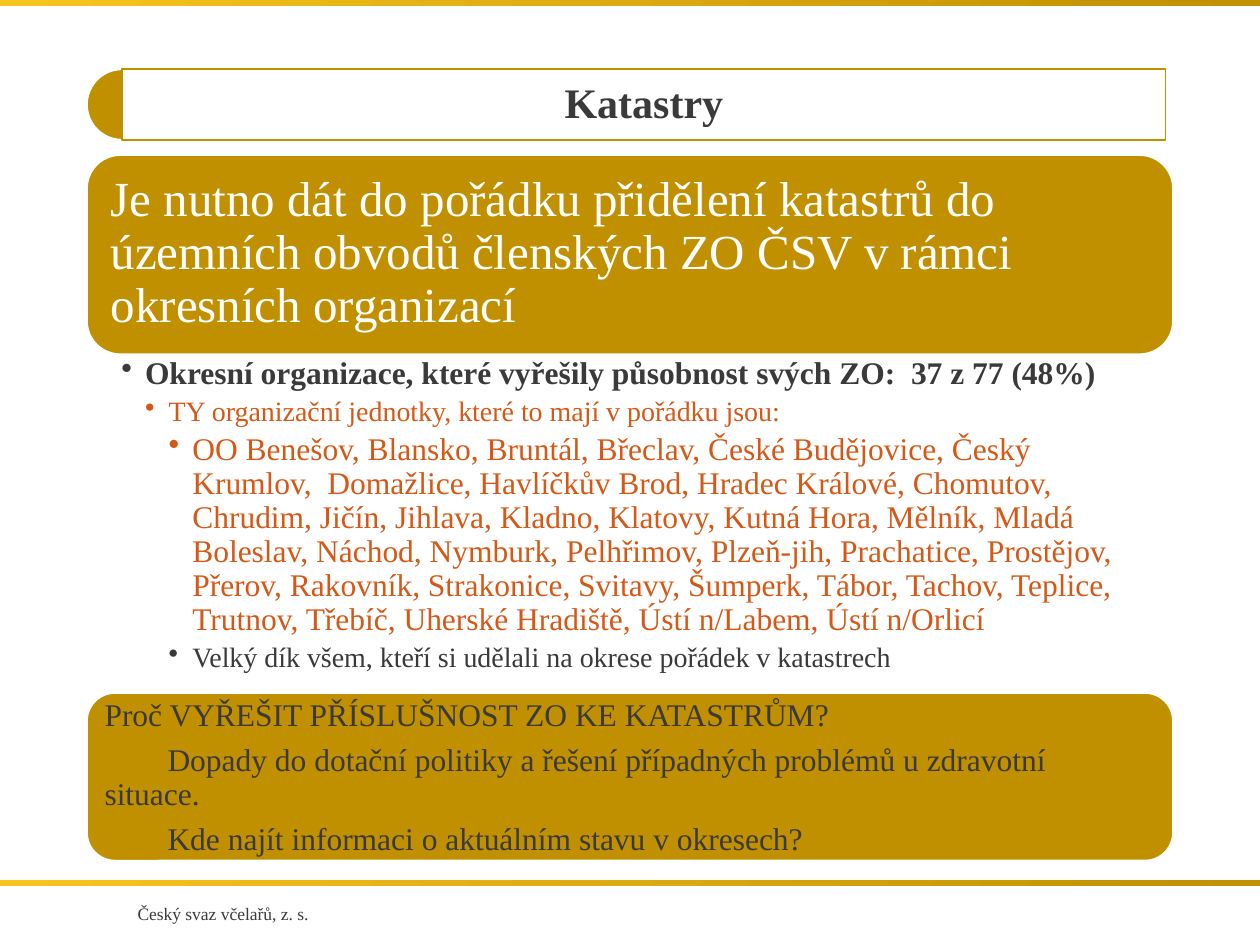
from dataclasses import dataclass

from lxml.etree import SubElement
from pptx import Presentation
from pptx.dml.color import RGBColor
from pptx.enum.shapes import MSO_SHAPE
from pptx.enum.text import MSO_ANCHOR, PP_ALIGN
from pptx.oxml.ns import qn
from pptx.util import Pt

FONT = "Times New Roman"
GOLD, DARK, ORANGE, WHITE = "C19000", "3A3A3A", "D55816", "FFFFFF"
BAND_START, BAND_END = "C19003", "F7C41F"
LEFT, WIDTH = 49.7, 620.6
TITLE_BOX = (69.8, 39.6, 596.2, 40.3)


@dataclass(frozen=True)
class Line:
    text: str
    size: float
    color: str = DARK
    bold: bool = False
    level: int = 0
    before: float = 0
    spacing: float = 0.9
    align: PP_ALIGN = PP_ALIGN.LEFT


@dataclass(frozen=True)
class TextBlock:
    box: tuple[float, float, float, float]
    insets: tuple[float, float, float, float]
    lines: list[Line]
    anchor: MSO_ANCHOR = MSO_ANCHOR.MIDDLE


TEXT_BLOCKS = [
    TextBlock((38.9, 512.6, 177.1, 19.4), (7.2, 3.6, 7.2, 3.6), [
        Line("Český svaz včelařů, z. s.", 10, spacing=1, align=PP_ALIGN.CENTER),
    ], MSO_ANCHOR.TOP),
    TextBlock((54.7, 93.6, 609.8, 103), (8.64, 8.64, 8.64, 8.64), [
        Line("Je nutno dát do pořádku přidělení katastrů do územních obvodů "
             "členských ZO ČSV v rámci okresních organizací", 28, WHITE),
    ]),
    TextBlock((LEFT, 202.3, WIDTH, 176.4), (19.7, 1.6, 10.1, 1.6), [
        Line("Okresní organizace, které vyřešily působnost svých ZO:  37 z 77 (48%)",
             18, bold=True, level=1),
        Line("TY organizační jednotky, které to mají v pořádku jsou:",
             16, ORANGE, level=2, before=3.6),
        Line("OO Benešov, Blansko, Bruntál, Břeclav, České Budějovice, Český Krumlov,  "
             "Domažlice, Havlíčkův Brod, Hradec Králové, Chomutov, Chrudim, Jičín, "
             "Jihlava, Kladno, Klatovy, Kutná Hora, Mělník, Mladá Boleslav, Náchod, "
             "Nymburk, Pelhřimov, Plzeň-jih, Prachatice, Prostějov, Přerov, Rakovník, "
             "Strakonice, Svitavy, Šumperk, Tábor, Tachov, Teplice, Trutnov, Třebíč, "
             "Uherské Hradiště, Ústí n/Labem, Ústí n/Orlicí",
             18, ORANGE, level=3, before=3.2),
        Line("Velký dík všem, kteří si udělali na okrese pořádek v katastrech",
             16, level=3, before=3.6),
    ], MSO_ANCHOR.TOP),
    TextBlock((54.7, 402.5, 609.8, 84.2), (5.04, 5.04, 5.04, 5.04), [
        Line("Proč VYŘEŠIT PŘÍSLUŠNOST ZO KE KATASTRŮM?", 18),
        Line("\tDopady do dotační politiky a řešení případných problémů "
             "u zdravotní \tsituace.", 18, before=6.3),
        Line("\tKde najít informaci o aktuálním stavu v okresech?", 18, before=6.3),
    ]),
    TextBlock(TITLE_BOX, (7.2, 7.2, 7.2, 7.2), [
        Line("Katastry", 24, bold=True, align=PP_ALIGN.CENTER),
    ]),
]


def rgb(value: str) -> RGBColor:
    return RGBColor.from_string(value)


def add_shape(slide, kind: MSO_SHAPE, box: tuple, fill: str = GOLD,
              line: str = WHITE, adjustments: tuple = ()):
    shape = slide.shapes.add_shape(kind, *map(Pt, box))
    shape.shadow.inherit = False
    shape.fill.solid()
    shape.fill.fore_color.rgb = rgb(fill)
    shape.line.color.rgb = rgb(line)
    shape.line.width = Pt(1)
    for index, value in enumerate(adjustments):
        shape.adjustments[index] = value
    return shape


def add_band(slide, top: float) -> None:
    band = add_shape(slide, MSO_SHAPE.RECTANGLE, (0, top, 720, 3.6))
    band.line.fill.background()
    band.fill.gradient()
    band.fill.gradient_angle = 180
    for stop, color, position in zip(band.fill.gradient_stops,
                                     (BAND_START, BAND_END), (0, 1)):
        stop.color.rgb = rgb(color)
        stop.position = position


def add_bullet(paragraph, line: Line) -> None:
    properties = paragraph._p.get_or_add_pPr()
    properties.set("marL", str(Pt(13.5 * line.level)))
    properties.set("indent", str(Pt(-13.5)))
    color = SubElement(properties, qn("a:buClr"))
    SubElement(color, qn("a:srgbClr"), val=line.color)
    SubElement(properties, qn("a:buChar"), char="•")


def add_text(slide, block: TextBlock) -> None:
    frame = slide.shapes.add_textbox(*map(Pt, block.box)).text_frame
    frame.word_wrap = True
    frame.vertical_anchor = block.anchor
    (frame.margin_left, frame.margin_top,
     frame.margin_right, frame.margin_bottom) = map(Pt, block.insets)
    for index, line in enumerate(block.lines):
        paragraph = frame.add_paragraph() if index else frame.paragraphs[0]
        paragraph.text = line.text
        paragraph.level = line.level
        if line.level:
            add_bullet(paragraph, line)
        paragraph.alignment = line.align
        paragraph.line_spacing = line.spacing
        if line.before:
            paragraph.space_before = Pt(line.before)
        font = paragraph.font
        font.name = FONT
        font.size = Pt(line.size)
        font.bold = line.bold
        font.color.rgb = rgb(line.color)


def main() -> None:
    presentation = Presentation()
    presentation.slide_width, presentation.slide_height = Pt(720), Pt(540)
    slide = presentation.slides.add_slide(presentation.slide_layouts[6])
    for top in (502.6, 0):
        add_band(slide, top)
    for top, height in ((88.6, 113.8), (396, 95.8)):
        add_shape(slide, MSO_SHAPE.ROUNDED_RECTANGLE, (LEFT, top, WIDTH, height),
                  adjustments=(0.167,))
    add_shape(slide, MSO_SHAPE.PIE, (LEFT, 39.6, 40.3, 40.3), adjustments=(54, 162))
    title = add_shape(slide, MSO_SHAPE.RECTANGLE, TITLE_BOX, WHITE, GOLD)
    fill_color = title._element.spPr.find(qn("a:solidFill"))[0]
    SubElement(fill_color, qn("a:alpha"), val="90000")
    for block in TEXT_BLOCKS:
        add_text(slide, block)
    presentation.save("out.pptx")


if __name__ == "__main__":
    main()
